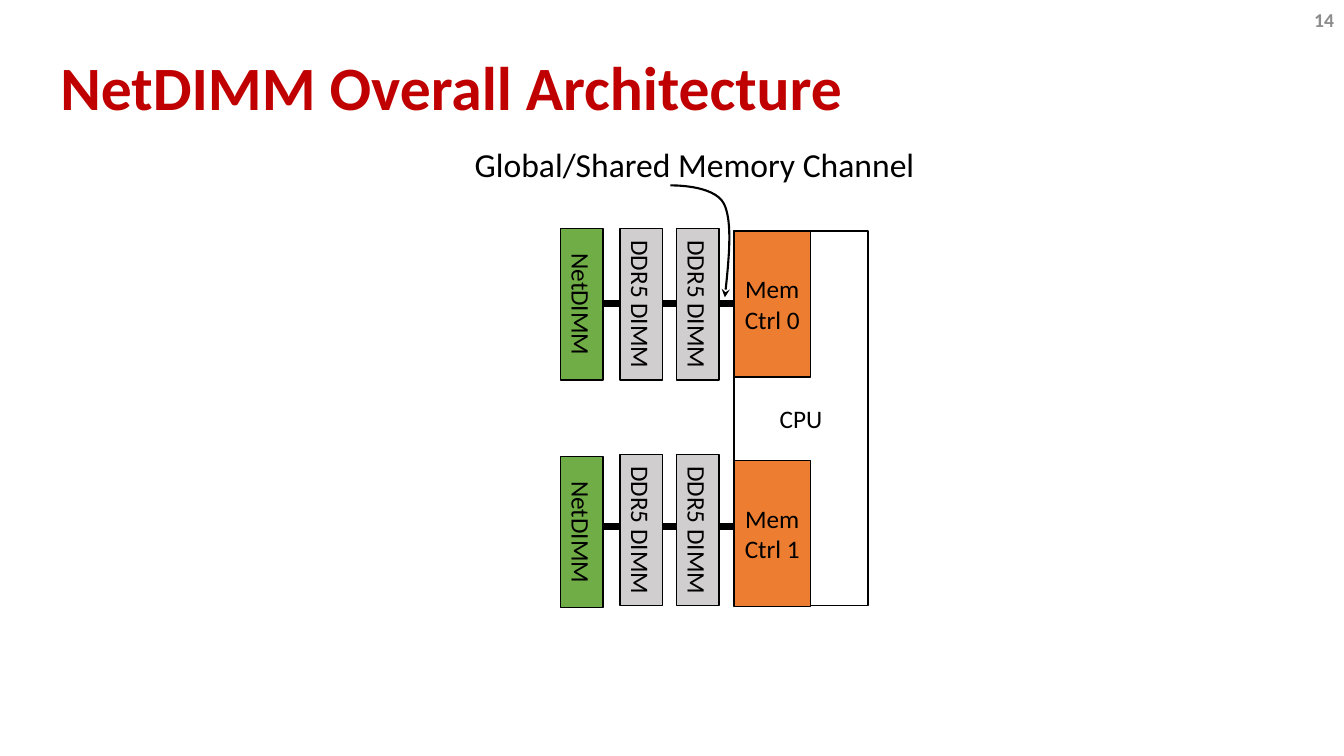
from dataclasses import dataclass

from lxml.etree import SubElement
from pptx import Presentation
from pptx.dml.color import RGBColor
from pptx.enum.shapes import MSO_CONNECTOR, MSO_SHAPE
from pptx.enum.text import MSO_ANCHOR, PP_ALIGN
from pptx.oxml.ns import qn
from pptx.util import Emu, Pt

PX = 9144  # EMU per px, 100 px to the inch


@dataclass(frozen=True)
class Theme:
    font: str = "Calibri"
    title: str = "C00000"
    muted: str = "8C8C8C"
    ink: str = "000000"
    cpu: str = "FFFFFF"
    controller: str = "ED7D31"
    ddr: str = "D0CECE"
    netdimm: str = "70AD47"
    title_size: int = 44
    number_size: int = 14
    label_size: int = 18
    callout_size: int = 24
    outline: float = 1
    arrow: float = 1.5
    bus: float = 5


THEME = Theme()


def px(*lengths):
    return [Emu(round(length * PX)) for length in lengths]


def rgb(code):
    return RGBColor.from_string(code)


def write(shape, text, size=THEME.label_size, color=THEME.ink, bold=False,
          align=PP_ALIGN.CENTER, anchor=MSO_ANCHOR.MIDDLE, insets=(10, 5),
          wrap=True, spacing=None):
    frame = shape.text_frame
    frame.word_wrap = wrap
    frame.vertical_anchor = anchor
    frame.margin_left = frame.margin_right = px(insets[0])[0]
    frame.margin_top = frame.margin_bottom = px(insets[1])[0]
    paragraph = frame.paragraphs[0]
    paragraph.alignment = align
    paragraph.line_spacing = spacing
    run = paragraph.add_run()
    run.text = text
    run.font.name = THEME.font
    run.font.size = Pt(size)
    run.font.bold = bold
    run.font.color.rgb = rgb(color)


def add_label(slide, box, text, **style):
    write(slide.shapes.add_textbox(*px(*box)), text, **style)


def add_block(slide, box, text, fill, kind=MSO_SHAPE.RECTANGLE, **style):
    block = slide.shapes.add_shape(kind, *px(*box))
    block.shadow.inherit = False
    block.fill.solid()
    block.fill.fore_color.rgb = rgb(fill)
    block.line.color.rgb = rgb(THEME.ink)
    block.line.width = Pt(THEME.outline)
    write(block, text, **style)
    return block


def add_dimm(slide, center_x, center_y, text, fill):
    """Memory module standing upright, its label read downwards."""
    length, thickness = 150, 42
    box = (center_x - length / 2, center_y - thickness / 2, length, thickness)
    dimm = add_block(slide, box, text, fill, MSO_SHAPE.ROUNDED_RECTANGLE, insets=(0, 5))
    dimm.adjustments[0] = 0
    dimm.rotation = 90


def add_bus(slide, start_x, end_x, y):
    bus = slide.shapes.add_connector(MSO_CONNECTOR.STRAIGHT, *px(start_x, y, end_x, y))
    bus.line.color.rgb = rgb(THEME.ink)
    bus.line.width = Pt(THEME.bus)
    SubElement(bus.element.spPr, qn("a:effectLst"))


def bezier(points, steps=16):
    """Points along a cubic curve, without its start."""
    for step in range(1, steps + 1):
        t = step / steps
        weights = ((1 - t) ** 3, 3 * t * (1 - t) ** 2, 3 * t ** 2 * (1 - t), t ** 3)
        yield tuple(round(sum(w * p[axis] for w, p in zip(weights, points)) * PX)
                    for axis in (0, 1))


def header(slide, box):
    left, top, width, height = box
    add_label(slide, (left + 50, top + 40, width - 83, height - 40),
              "NetDIMM Overall Architecture", size=THEME.title_size,
              color=THEME.title, bold=True, align=PP_ALIGN.LEFT, spacing=0.9)
    add_label(slide, (left + width - 300, top, 300, 40), "14", size=THEME.number_size,
              color=THEME.muted, bold=True, align=PP_ALIGN.RIGHT)


def processor(slide, box):
    """CPU with a memory controller in each left corner."""
    left, top, width, height = box
    add_block(slide, box, "CPU", THEME.cpu)
    ctrl_width, ctrl_height = 76, 145
    for index, ctrl_top in enumerate((top, top + height - ctrl_height + 1)):
        add_block(slide, (left, ctrl_top, ctrl_width, ctrl_height),
                  f"Mem Ctrl {index}", THEME.controller, insets=(8, 5))


def memory_channel(slide, box, bus_y, netdimm_y):
    """Row of modules on a bus that ends at the right edge of the box."""
    left, top, width, height = box
    center_y = top + height / 2
    add_bus(slide, left + width, left + 21, bus_y)
    add_dimm(slide, left + 21, netdimm_y, "NetDIMM", THEME.netdimm)
    for offset in (80, 136):
        add_dimm(slide, left + offset, center_y, "DDR5 DIMM", THEME.ddr)


def channel_callout(slide, box):
    """Caption and the curved arrow from it down to the first bus."""
    left, top, width, height = box
    add_label(slide, (left, top, width, 50), "Global/Shared Memory Channel",
              size=THEME.callout_size, align=PP_ALIGN.LEFT,
              anchor=MSO_ANCHOR.TOP, wrap=False)
    tip, bend, tail = [(left + x, top + y) for x, y in ((258, 157), (257, 64), (204, 46))]
    to_bend = (tip, (left + 262, top + 119), (left + 266, top + 82), bend)
    to_tail = (bend, (left + 247, top + 45), tail, tail)
    builder = slide.shapes.build_freeform(*px(*tip), scale=1.0)
    builder.add_line_segments([*bezier(to_bend), *bezier(to_tail)], close=False)
    arrow = builder.convert_to_shape()
    arrow.shadow.inherit = False
    arrow.fill.background()
    arrow.line.color.rgb = rgb(THEME.ink)
    arrow.line.width = Pt(THEME.arrow)
    SubElement(arrow.line._get_or_add_ln(), qn("a:headEnd"), type="stealth")


def main():
    deck = Presentation()
    deck.slide_width, deck.slide_height = px(1333, 750)
    slide = deck.slides.add_slide(deck.slide_layouts[6])
    header(slide, (0, 0, 1333, 140))
    processor(slide, (728, 229, 133, 372))
    memory_channel(slide, (556, 227, 172, 150), bus_y=301, netdimm_y=302)
    memory_channel(slide, (556, 451, 172, 150), bus_y=522, netdimm_y=528)
    channel_callout(slide, (461, 138, 458, 157))
    deck.save("out.pptx")


if __name__ == "__main__":
    main()
